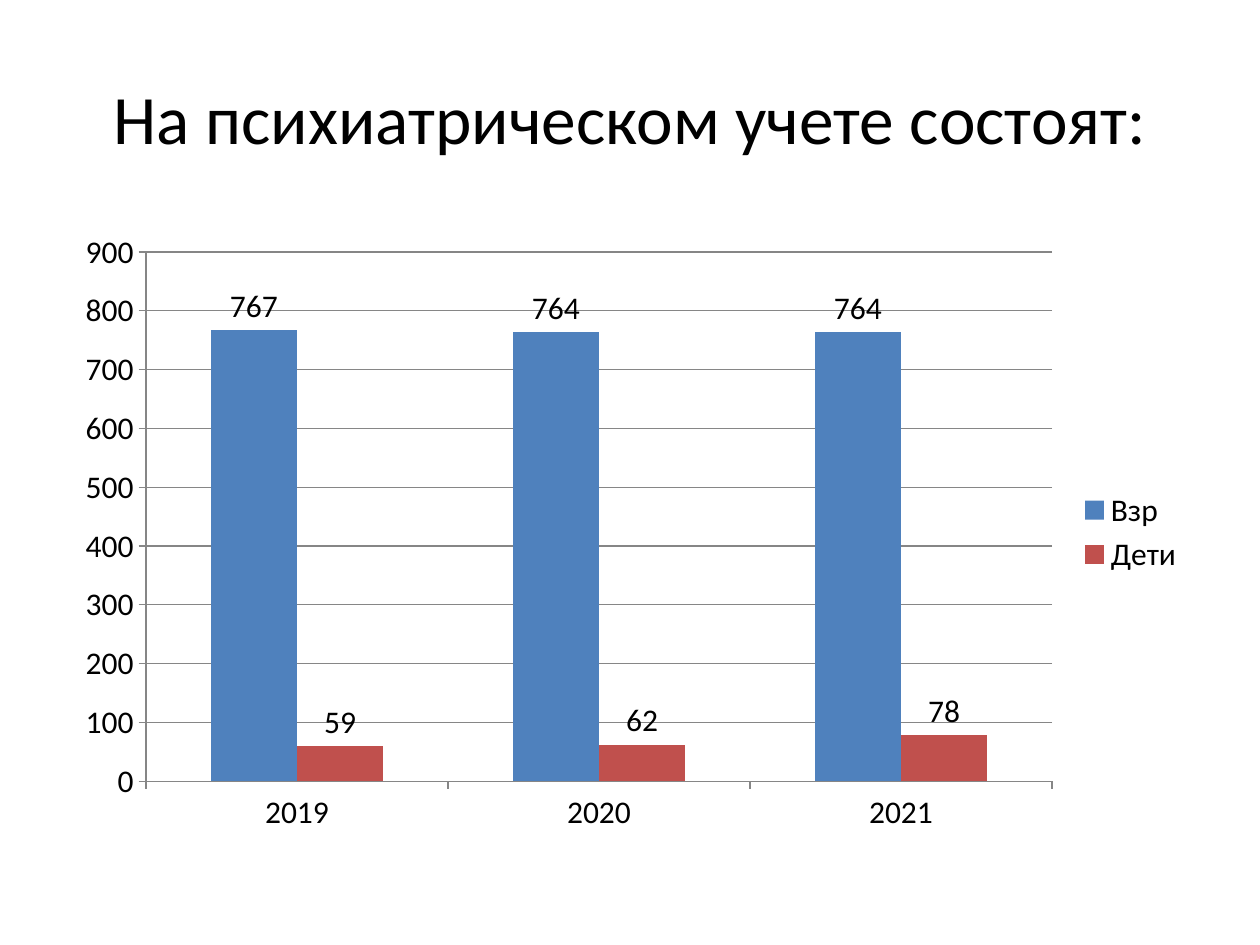
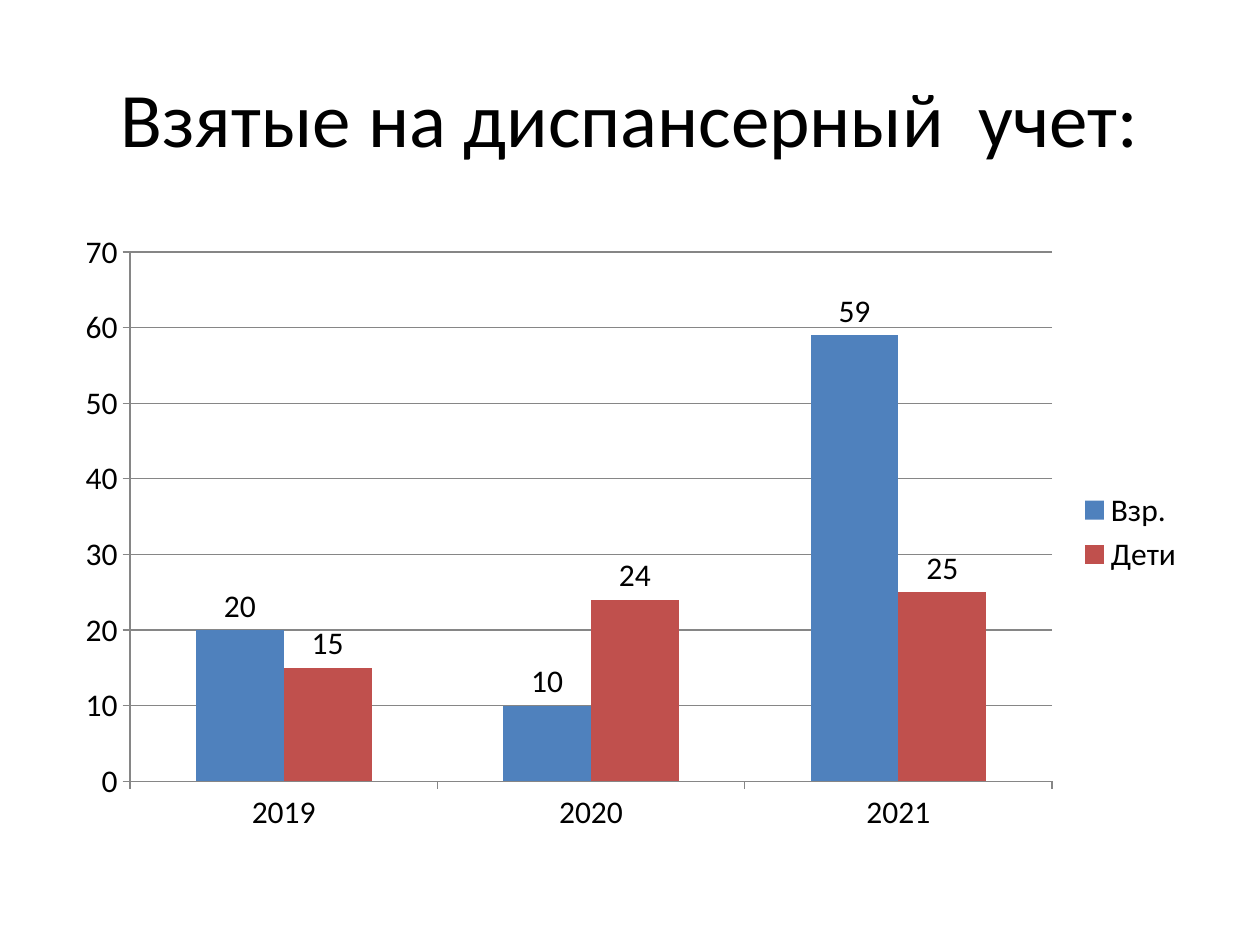
from pptx import Presentation
from pptx.chart.data import CategoryChartData
from pptx.dml.color import RGBColor
from pptx.enum.chart import (XL_CHART_TYPE, XL_LABEL_POSITION,
                             XL_LEGEND_POSITION, XL_TICK_MARK)
from pptx.enum.text import MSO_ANCHOR, PP_ALIGN
from pptx.util import Pt

PX = 9144  # EMU in one px, 100 px to the inch
SLIDE_SIZE = (1000, 750)
TITLE_BOX = (50, 30, 900, 125)
CHART_BOX = (50, 175, 900, 495)

COLUMNS = XL_CHART_TYPE.COLUMN_CLUSTERED
ABOVE_BAR = XL_LABEL_POSITION.OUTSIDE_END
LEGEND_RIGHT = XL_LEGEND_POSITION.RIGHT
TICK_OUT, TICK_NONE = XL_TICK_MARK.OUTSIDE, XL_TICK_MARK.NONE
MIDDLE, CENTER = MSO_ANCHOR.MIDDLE, PP_ALIGN.CENTER

BLACK = RGBColor(0x00, 0x00, 0x00)
WHITE = RGBColor(0xFF, 0xFF, 0xFF)
AXIS_GRAY = RGBColor(0x86, 0x86, 0x86)
ADULTS_BLUE = RGBColor(0x4F, 0x81, 0xBD)
CHILDREN_RED = RGBColor(0xC0, 0x50, 0x4D)
GROUP_COLORS = (ADULTS_BLUE, CHILDREN_RED)

FONT = "Calibri"
YEARS = ("2019", "2020", "2021")
REGISTERS = (
    {"title": "На психиатрическом учете состоят:", "title_size": 39.6,
     "axis_max": 900, "axis_step": 100,
     "groups": {"Взр": (767, 764, 764), "Дети": (59, 62, 78)}},
    {"title": "Взятые на диспансерный  учет:", "title_size": 44,
     "axis_max": 70, "axis_step": 10,
     "groups": {"Взр.": (20, 10, 59), "Дети": (15, 24, 25)}},
)


def to_emu(box):
    return [length * PX for length in box]


def set_attributes(target, **values):
    for name, value in values.items():
        setattr(target, name, value)


def set_font(font, size):
    set_attributes(font, name=FONT, size=Pt(size), bold=False)
    font.color.rgb = BLACK


def set_line(line):
    line.color.rgb = AXIS_GRAY
    line.width = Pt(0.75)


def place_title(title, box, text, size):
    left, top, width, height = to_emu(box)
    set_attributes(title, left=left, top=top, width=width, height=height)
    frame = title.text_frame
    set_attributes(frame, text=text, vertical_anchor=MIDDLE, word_wrap=True)
    heading = frame.paragraphs[0]
    heading.alignment = CENTER
    set_font(heading.runs[0].font, size)


def format_axes(chart, maximum, step):
    set_attributes(chart.value_axis, minimum_scale=0, maximum_scale=maximum,
                   major_unit=step, has_major_gridlines=True)
    set_line(chart.value_axis.major_gridlines.format.line)
    for axis in (chart.category_axis, chart.value_axis):
        set_attributes(axis, major_tick_mark=TICK_OUT,
                       minor_tick_mark=TICK_NONE)
        set_line(axis.format.line)


def add_register_chart(slide, box, register):
    counts = CategoryChartData(number_format="General")
    counts.categories = YEARS
    for group, values in register["groups"].items():
        counts.add_series(group, values)
    chart = slide.shapes.add_chart(COLUMNS, *to_emu(box), counts).chart
    set_attributes(chart, has_title=False, has_legend=True)
    set_font(chart.font, 18)
    set_attributes(chart.legend, position=LEGEND_RIGHT,
                   include_in_layout=False)
    format_axes(chart, register["axis_max"], register["axis_step"])

    plot = chart.plots[0]
    set_attributes(plot, gap_width=150, overlap=0, vary_by_categories=False)
    for series, color in zip(plot.series, GROUP_COLORS):
        series.invert_if_negative = False
        series.format.fill.solid()
        series.format.fill.fore_color.rgb = color
        set_attributes(series.data_labels, show_value=True,
                       position=ABOVE_BAR)


def add_register_slide(deck, layout, register):
    slide = deck.slides.add_slide(layout)
    slide.background.fill.solid()
    slide.background.fill.fore_color.rgb = WHITE
    place_title(slide.shapes.title, TITLE_BOX,
                register["title"], register["title_size"])
    add_register_chart(slide, CHART_BOX, register)


def main():
    deck = Presentation()
    deck.slide_width, deck.slide_height = to_emu(SLIDE_SIZE)
    title_only = deck.slide_layouts.get_by_name("Title Only")
    for register in REGISTERS:
        add_register_slide(deck, title_only, register)
    deck.save("out.pptx")


if __name__ == "__main__":
    main()
